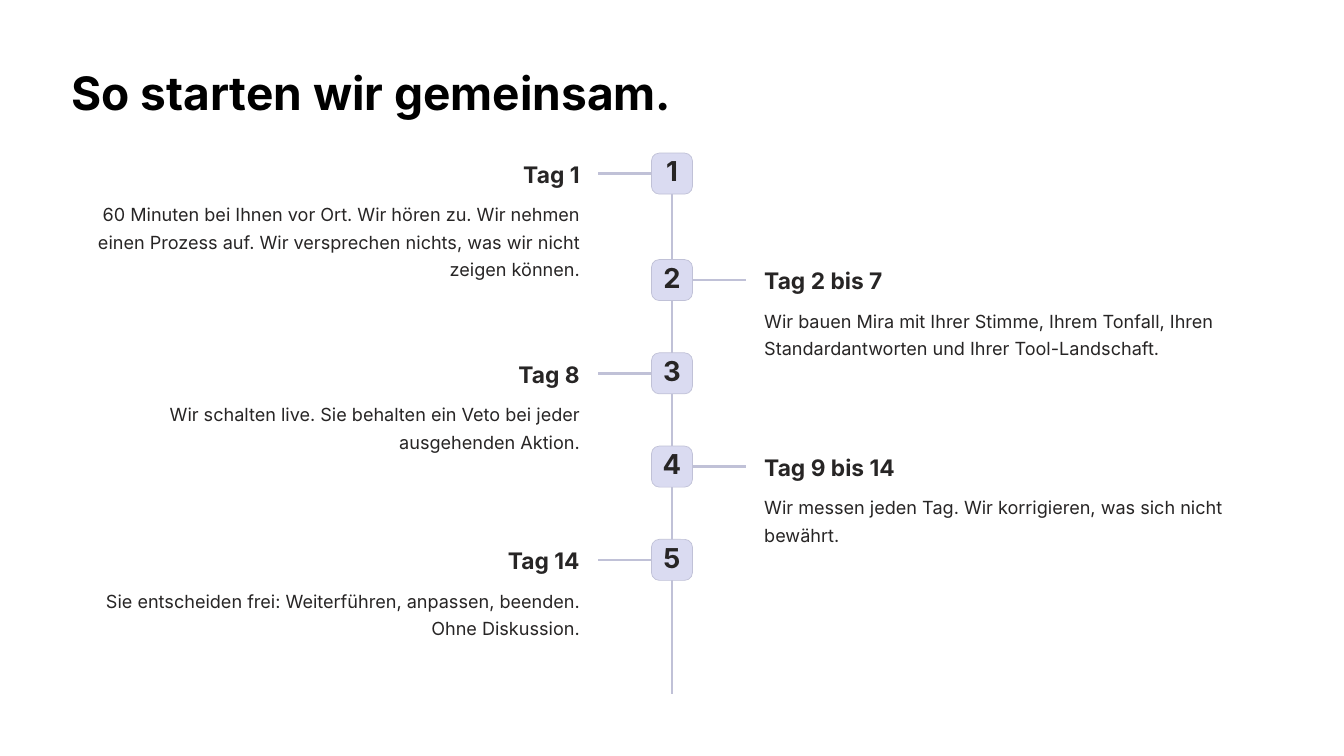
import pptx
import pptx.util
import pptx.dml.color
import pptx.enum.shapes
import pptx.enum.text
import pptx.oxml.ns
import lxml.etree
from dataclasses import dataclass

Cm = pptx.util.Cm
Pt = pptx.util.Pt
Align = pptx.enum.text.PP_ALIGN
Anchor = pptx.enum.text.MSO_ANCHOR


def color(code):
    return pptx.dml.color.RGBColor.from_string(code)


@dataclass(frozen=True)
class Theme:
    font: str = "Inter"
    black: str = "000000"
    ink: str = "272525"
    line: str = "C0C1D7"
    fill: str = "DADBF1"
    # Type styles: size, line spacing, bold
    title: tuple = (39.5, 49, True)
    badge: tuple = (23.5, 23.5, True)
    head: tuple = (19.5, 24.5, True)
    body: tuple = (15.5, 23.5, False)


THEME = Theme()

# Layout in centimetres
MID = 20.32
TOP, FOOT = 4.63, 20.98
SECOND, STEP = 7.85, 2.82
SIDE = 1.24
ARM_IN, ARM_OUT = 0.56, 2.24
GAP = 2.79
HEAD_W, BODY_W = 6.98, 15.37

STEPS = [
    ("Tag 1", "60 Minuten bei Ihnen vor Ort. Wir hören zu. Wir nehmen einen "
     "Prozess auf. Wir versprechen nichts, was wir nicht zeigen können."),
    ("Tag 2 bis 7", "Wir bauen Mira mit Ihrer Stimme, Ihrem Tonfall, Ihren "
     "Standardantworten und Ihrer Tool-Landschaft."),
    ("Tag 8", "Wir schalten live. Sie behalten ein Veto bei jeder "
     "ausgehenden Aktion."),
    ("Tag 9 bis 14", "Wir messen jeden Tag. Wir korrigieren, was sich nicht "
     "bewährt."),
    ("Tag 14", "Sie entscheiden frei: Weiterführen, anpassen, beenden. "
     "Ohne Diskussion."),
]


def write(shape, text, style, align, ink=THEME.ink, wrap=True):
    frame = shape.text_frame
    frame.word_wrap = wrap
    frame.margin_left = frame.margin_right = 0
    frame.margin_top = frame.margin_bottom = 0
    para = frame.paragraphs[0]
    para.text = text
    para.alignment = align
    size, space, bold = style
    para.line_spacing = Pt(space)
    para.font.name = THEME.font
    para.font.size = Pt(size)
    para.font.bold = bold
    para.font.color.rgb = color(ink)


def add_text(slide, left, top, width, height, *args, **kwargs):
    box = slide.shapes.add_textbox(Cm(left), Cm(top), Cm(width), Cm(height))
    write(box, *args, **kwargs)


def add_line(slide, x1, y1, x2, y2):
    kind = pptx.enum.shapes.MSO_CONNECTOR.STRAIGHT
    line = slide.shapes.add_connector(kind, Cm(x1), Cm(y1), Cm(x2), Cm(y2))
    line.line.color.rgb = color(THEME.line)
    line.line.width = Pt(2)
    props = line._element.spPr
    lxml.etree.SubElement(props, pptx.oxml.ns.qn("a:effectLst"))


def add_badge(slide, top, label):
    kind = pptx.enum.shapes.MSO_SHAPE.ROUNDED_RECTANGLE
    badge = slide.shapes.add_shape(
        kind, Cm(MID - SIDE / 2), Cm(top), Cm(SIDE), Cm(SIDE))
    badge.adjustments[0] = 0.19
    badge.shadow.inherit = False
    badge.fill.solid()
    badge.fill.fore_color.rgb = color(THEME.fill)
    badge.line.color.rgb = color(THEME.line)
    badge.line.width = Pt(0.6)
    write(badge, label, THEME.badge, Align.CENTER, wrap=False)
    badge.text_frame.vertical_anchor = Anchor.MIDDLE


def add_step(slide, index, head, body):
    top = TOP if index == 0 else SECOND + (index - 1) * STEP
    left = index % 2 == 0
    sign = -1 if left else 1
    align = Align.RIGHT if left else Align.LEFT

    # Arm and numbered badge
    mid = top + SIDE / 2
    add_line(slide, MID + sign * ARM_IN, mid, MID + sign * ARM_OUT, mid)
    add_badge(slide, top, str(index + 1))

    # Heading and body, set towards the spine
    edge = MID + sign * GAP
    rows = [(head, THEME.head, 0.19, HEAD_W, 0.86),
            (body, THEME.body, 1.36, BODY_W, 2.51 if index == 0 else 1.68)]
    for text, style, drop, width, height in rows:
        start = edge - width if left else edge
        add_text(slide, start, top + drop, width, height, text, style, align)


def main():
    deck = pptx.Presentation()
    deck.slide_width, deck.slide_height = Cm(40.64), Cm(22.86)
    slide = deck.slides.add_slide(deck.slide_layouts[6])

    # Title
    add_text(slide, 2.16, 1.88, 18.19, 1.75, "So starten wir gemeinsam.",
             THEME.title, Align.LEFT, ink=THEME.black, wrap=False)

    # Timeline
    add_line(slide, MID, TOP, MID, FOOT)
    for index, (head, body) in enumerate(STEPS):
        add_step(slide, index, head, body)

    deck.save("out.pptx")


if __name__ == "__main__":
    main()
